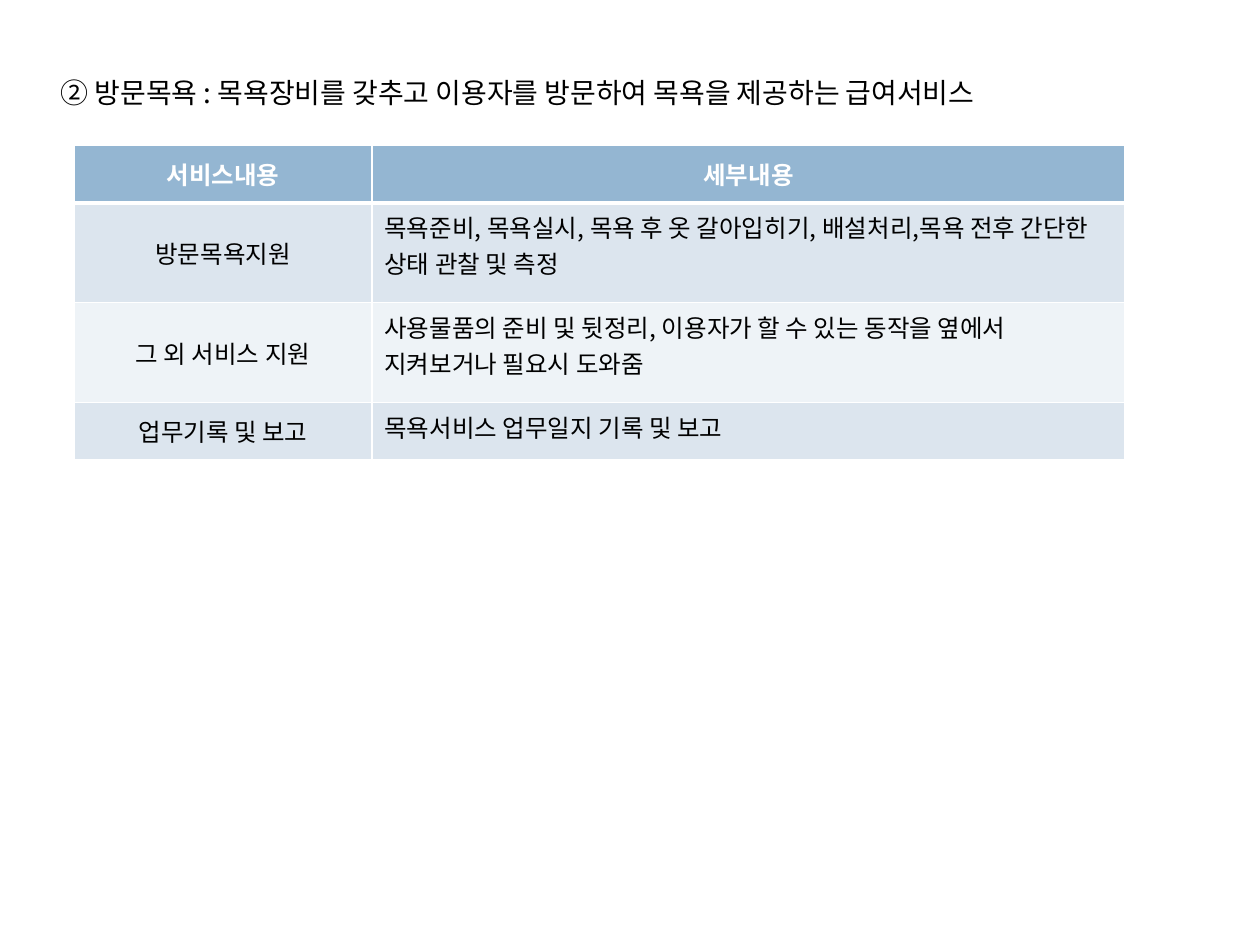
"""Build the slide that explains the home-visit bathing service."""
import dataclasses
import typing

import lxml.etree
import pptx
import pptx.dml.color
import pptx.enum.text
import pptx.oxml.ns
import pptx.util

Pt = pptx.util.Pt
ALIGN = pptx.enum.text.PP_ALIGN
ANCHOR = pptx.enum.text.MSO_ANCHOR
qn = pptx.oxml.ns.qn

FONT = "Noto Sans CJK KR"
COLORS = {
    "text": "000000",
    "white": "FFFFFF",
    "header": "94B6D2",
    "odd": "DCE5EE",
    "even": "EEF3F7",
}
COL_WIDTHS = (170, 430.5)


@dataclasses.dataclass(frozen=True)
class ServiceRow:
    service: str
    detail: str
    height: float
    fill: str
    header: bool = False


ROWS = (
    ServiceRow("서비스내용", "세부내용", 33, "header", True),
    ServiceRow(
        "방문목욕지원",
        "목욕준비, 목욕실시, 목욕 후 옷 갈아입히기, 배설처리,목욕 전후 간단한 상태 관찰 및 측정",
        57,
        "odd",
    ),
    ServiceRow(
        "그 외 서비스 지원",
        "사용물품의 준비 및 뒷정리, 이용자가 할 수 있는 동작을 옆에서 지켜보거나 필요시 도와줌",
        57,
        "even",
    ),
    ServiceRow("업무기록 및 보고", "목욕서비스 업무일지 기록 및 보고", 33, "odd"),
)


def rgb(name: str) -> pptx.dml.color.RGBColor:
    return pptx.dml.color.RGBColor.from_string(COLORS[name])


def set_text(tf: typing.Any, text: str, size: float, color: str, align: typing.Any, bold: bool = False) -> None:
    tf.text = text
    p = tf.paragraphs[0]
    p.alignment = align
    for r in p.runs:
        r.font.size = Pt(size)
        r.font.bold = bold
        r.font.name = FONT
        r.font.color.rgb = rgb(color)
        ea = lxml.etree.SubElement(r.font._element, qn("a:ea"))
        ea.set("typeface", FONT)


def set_borders(cell: typing.Any, bottom: float) -> None:
    tc_pr = cell._tc.get_or_add_tcPr()
    for i, (side, width) in enumerate(zip("LRTB", (1, 1, 1, bottom))):
        ln = lxml.etree.Element(qn(f"a:ln{side}"), w=str(Pt(width)))
        fill = lxml.etree.SubElement(ln, qn("a:solidFill"))
        lxml.etree.SubElement(fill, qn("a:srgbClr"), val=COLORS["white"])
        tc_pr.insert(i, ln)


def add_title(s: typing.Any, text: str) -> None:
    sp = s.shapes.title
    sp.left, sp.top, sp.width, sp.height = Pt(27.4), Pt(43.2), Pt(646.5), Pt(26.6)
    tf = sp.text_frame
    tf.word_wrap = True
    tf.auto_size = pptx.enum.text.MSO_AUTO_SIZE.NONE
    tf.vertical_anchor = ANCHOR.TOP
    tf.margin_top = tf.margin_bottom = 0
    set_text(tf, text, 16, "text", ALIGN.LEFT)


def add_service_table(s: typing.Any, rows: typing.Sequence[ServiceRow]) -> None:
    height = sum(row.height for row in rows)
    sp = s.shapes.add_table(
        len(rows), len(COL_WIDTHS), Pt(42.5), Pt(83), Pt(sum(COL_WIDTHS)), Pt(height)
    )
    table = sp.table
    for column, width in zip(table.columns, COL_WIDTHS):
        column.width = Pt(width)
    for i, row in enumerate(rows):
        table.rows[i].height = Pt(row.height)
        for j, text in enumerate((row.service, row.detail)):
            cell = table.cell(i, j)
            centered = row.header or j == 0
            cell.fill.solid()
            cell.fill.fore_color.rgb = rgb(row.fill)
            cell.vertical_anchor = ANCHOR.MIDDLE if centered else ANCHOR.TOP
            set_borders(cell, 3 if row.header else 1)
            set_text(
                cell.text_frame,
                text,
                14,
                "white" if row.header else "text",
                ALIGN.CENTER if centered else ALIGN.LEFT,
                row.header,
            )


def main() -> None:
    prs = pptx.Presentation()
    prs.slide_width, prs.slide_height = Pt(720), Pt(540)
    s = prs.slides.add_slide(prs.slide_layouts.get_by_name("Title Only"))
    add_title(s, "② 방문목욕 : 목욕장비를 갖추고 이용자를 방문하여 목욕을 제공하는 급여서비스")
    add_service_table(s, ROWS)
    prs.save("out.pptx")


if __name__ == "__main__":
    main()
